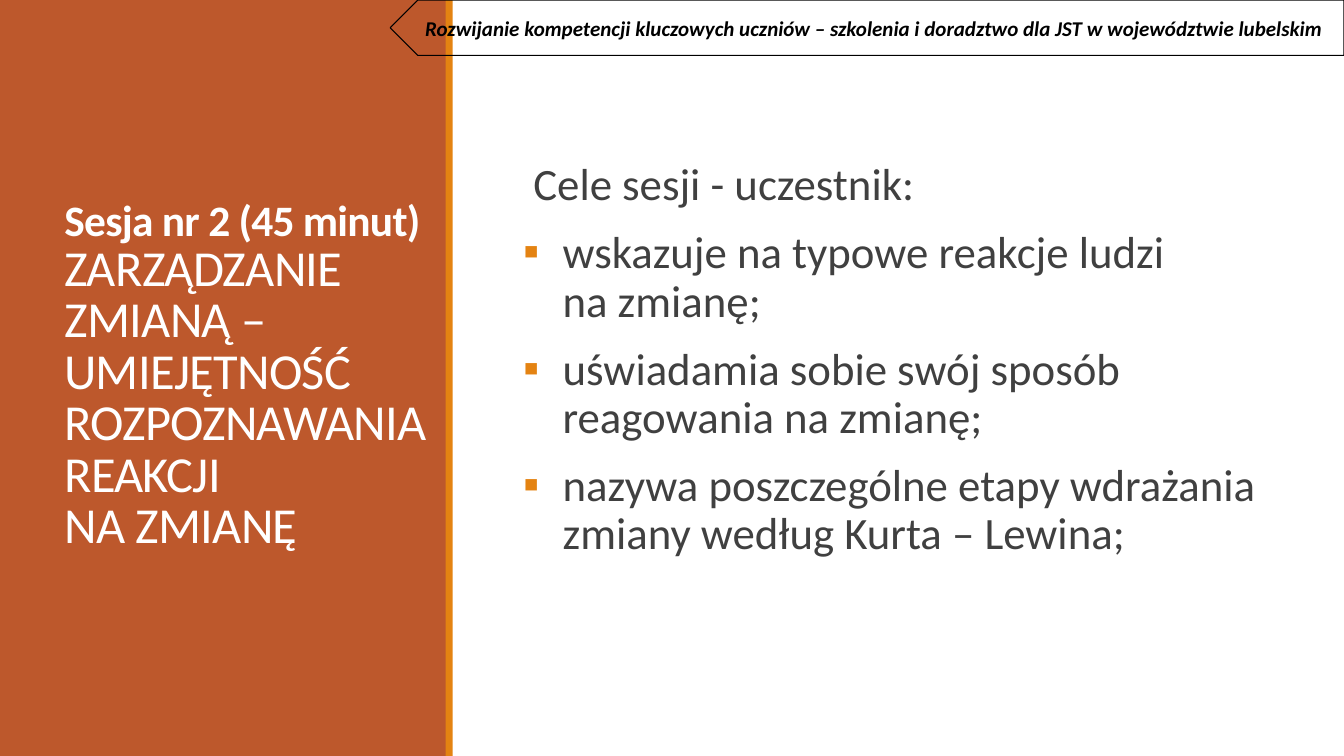
from pptx import Presentation
from pptx.dml.color import RGBColor
from pptx.enum import shapes, text
from pptx.oxml import ns
from pptx.util import Inches, Pt
from lxml import etree

# Content
PROGRAMME = ("Rozwijanie kompetencji kluczowych uczniów – szkolenia i doradztwo "
             "dla JST w województwie lubelskim")
SESSION = "Sesja nr 2 (45 minut)"
TOPIC = "ZARZĄDZANIE ZMIANĄ – UMIEJĘTNOŚĆ ROZPOZNAWANIA REAKCJI \vNA ZMIANĘ"
GOALS_INTRO = "Cele sesji - uczestnik:"
GOALS = [
    "wskazuje na typowe reakcje ludzi \vna zmianę;",
    "uświadamia sobie swój sposób reagowania na zmianę;",
    "nazywa poszczególne etapy wdrażania zmiany według Kurta – Lewina;",
]
RUST, ORANGE, WHITE, GREY, BLACK = "BD582C", "E48312", "FFFFFF", "404040", "000000"
SLIDE_W, SLIDE_H = 13.33, 7.5
TEXT_TOP, TEXT_H = 0.66, 6.17


def color(value):
    return RGBColor.from_string(value)


def add_panel(left, width, fill):
    panel = slide.shapes.add_shape(shapes.MSO_SHAPE.RECTANGLE, Inches(left), 0,
                                   Inches(width), Inches(SLIDE_H))
    panel.shadow.inherit = False
    panel.fill.solid()
    panel.fill.fore_color.rgb = color(fill)
    panel.line.fill.background()


def add_text(left, width):
    frame = slide.shapes.add_textbox(Inches(left), Inches(TEXT_TOP),
                                     Inches(width), Inches(TEXT_H)).text_frame
    frame.word_wrap = True
    frame.vertical_anchor = text.MSO_ANCHOR.MIDDLE
    return frame


def style(run, size, value, bold=False, italic=False):
    run.font.name = "Calibri"
    run.font.size = Pt(size)
    run.font.color.rgb = color(value)
    run.font.bold, run.font.italic = bold, italic


def set_indent(paragraph, indent, bullet=None):
    props = paragraph._p.get_or_add_pPr()
    props.set("marL", str(Inches(indent)))
    props.set("indent", str(-Inches(indent) if bullet else 0))
    if bullet:
        tint = etree.SubElement(props, ns.qn("a:buClr"))
        etree.SubElement(tint, ns.qn("a:srgbClr"), val=ORANGE)
        etree.SubElement(props, ns.qn("a:buFont"), typeface="Calibri")
        etree.SubElement(props, ns.qn("a:buChar"), char=bullet)


deck = Presentation()
deck.slide_width, deck.slide_height = Inches(SLIDE_W), Inches(SLIDE_H)
slide = deck.slides.add_slide(deck.slide_layouts[6])

# Left panel with its edge
add_panel(0, 4.43, RUST)
add_panel(4.42, 0.07, ORANGE)

# Session title
title = add_text(0.54, 3.82).paragraphs[0]
title.text = f"{SESSION}\v{TOPIC}"
title.line_spacing = 0.85
for run in title.runs:
    heading = run.text == SESSION
    style(run, 31 if heading else 36, WHITE, bold=heading)
    run.font._element.set("spc", "-50")

# Session goals
goals = add_text(5.19, 7.94)
goals.margin_left = goals.margin_right = 0
goals.margin_top, goals.margin_bottom = Inches(0.22), Inches(0.55)
goals.text = "\n".join([GOALS_INTRO] + GOALS)
for index, goal in enumerate(goals.paragraphs):
    if index:
        set_indent(goal, 0.39, "▪")
        goal.space_before = Pt(12)
    else:
        set_indent(goal, 0.1)
    goal.line_spacing, goal.space_after = 0.9, Pt(2)
    for run in goal.runs:
        style(run, 32, GREY)

# Programme banner, pointing left
banner = slide.shapes.add_shape(shapes.MSO_SHAPE.PENTAGON, Inches(3.87), 0,
                                Inches(9.46), Inches(0.55))
banner.element.spPr.find(ns.qn("a:xfrm")).set("flipH", "1")
banner.shadow.inherit = False
banner.fill.background()
banner.line.color.rgb = color(BLACK)
banner.line.width = Pt(0.75)
banner.text_frame.text = PROGRAMME
banner.text_frame.word_wrap = True
banner.text_frame.vertical_anchor = text.MSO_ANCHOR.MIDDLE
programme = banner.text_frame.paragraphs[0]
programme.alignment = text.PP_ALIGN.CENTER
style(programme.runs[0], 15, BLACK, bold=True, italic=True)

deck.save("out.pptx")
